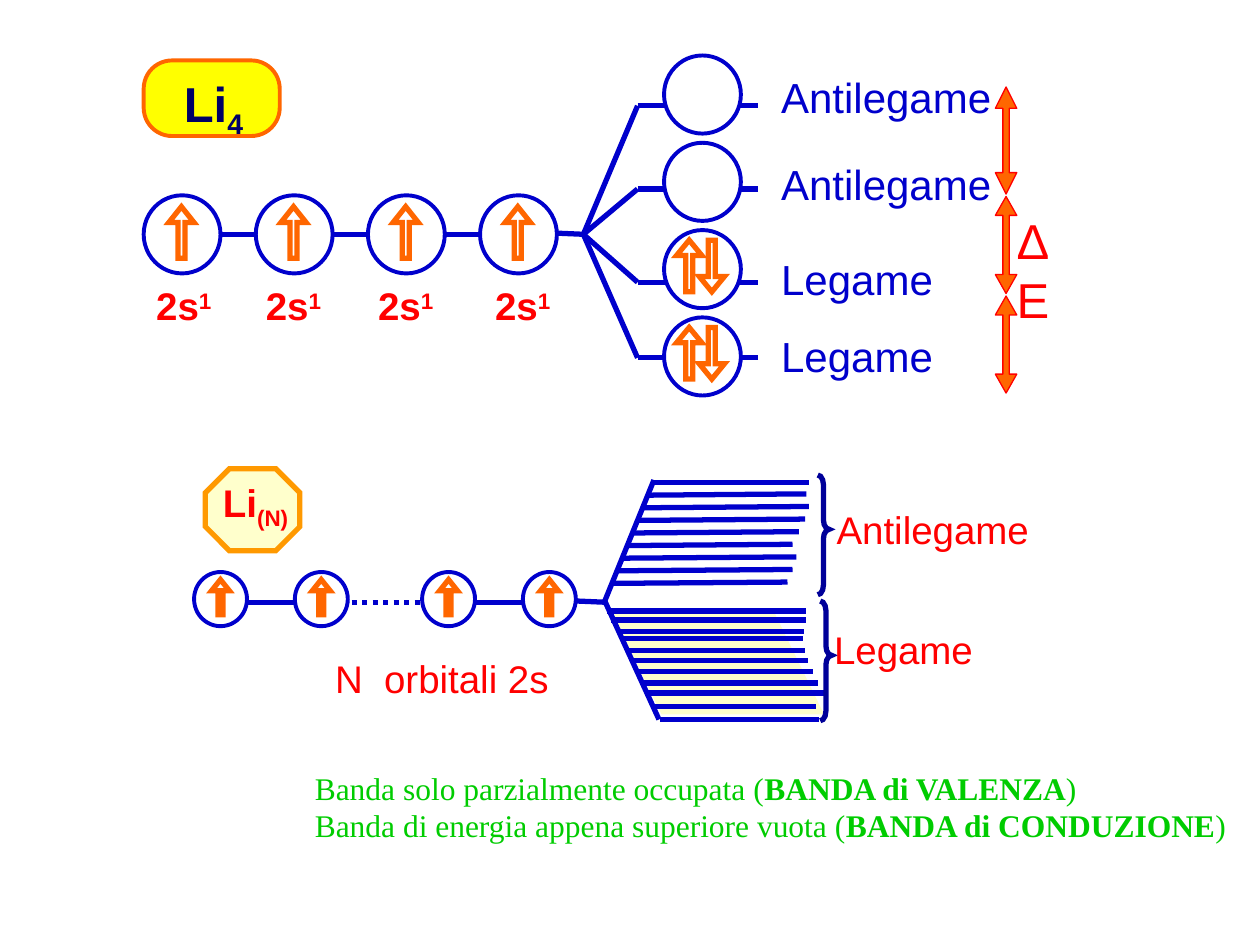
from dataclasses import dataclass

from lxml import etree
from pptx import Presentation
from pptx.dml.color import RGBColor
from pptx.enum.dml import MSO_LINE
from pptx.enum.shapes import MSO_CONNECTOR, MSO_SHAPE
from pptx.enum.text import MSO_ANCHOR, PP_ALIGN
from pptx.oxml.ns import qn
from pptx.util import Inches, Pt

STRAIGHT = MSO_CONNECTOR.STRAIGHT
ELLIPSE, UP_ARROW, DOWN_ARROW = MSO_SHAPE.OVAL, MSO_SHAPE.UP_ARROW, MSO_SHAPE.DOWN_ARROW
SUBSCRIPT, SUPERSCRIPT = -25000, 30000


@dataclass(frozen=True)
class Theme:
    blue: str = "0000CC"
    navy: str = "000066"
    brace: str = "000099"
    red: str = "FF0000"
    orange: str = "FF6600"
    amber: str = "FF9900"
    yellow: str = "FFFF00"
    cream: str = "FFFFCC"
    green: str = "00CC00"
    white: str = "FFFFFF"
    sans: str = "Arial"
    serif: str = "Times New Roman"
    title: int = 28
    level: int = 24
    label: int = 22
    note: int = 18
    thin: float = 0.75
    outline: float = 2.25
    thick: float = 3


theme = Theme()
presentation = Presentation()
presentation.slide_width, presentation.slide_height = Inches(10), Inches(7.5)
slide = presentation.slides.add_slide(presentation.slide_layouts[6])


def draw_shape(kind, box, fill, line, width=theme.thick, adjustments=()):
    """Add a preset shape with mitred corners; None means no fill or no line."""
    shape = slide.shapes.add_shape(kind, *map(Inches, box))
    shape.shadow.inherit = False
    for index, value in enumerate(adjustments):
        shape.adjustments[index] = value
    if fill:
        shape.fill.solid()
        shape.fill.fore_color.rgb = RGBColor.from_string(fill)
    else:
        shape.fill.background()
    if line:
        shape.line.color.rgb = RGBColor.from_string(line)
        shape.line.width = Pt(width)
        etree.SubElement(shape.line._get_or_add_ln(), qn("a:miter"), lim="800000")
    else:
        shape.line.fill.background()
    return shape


def add_label(box, runs, size, color, bold=False):
    """Add a label from (text, baseline) runs."""
    text_frame = slide.shapes.add_textbox(*map(Inches, box)).text_frame
    text_frame.word_wrap = True
    text_frame.margin_left = text_frame.margin_right = Inches(0.06)
    text_frame.margin_top = text_frame.margin_bottom = Inches(0.03)
    for text, baseline in runs:
        run = text_frame.paragraphs[0].add_run()
        run.text = text
        run.font.name, run.font.size, run.font.bold = theme.sans, Pt(size), bold
        run.font.color.rgb = RGBColor.from_string(color)
        if baseline:
            run._r.get_or_add_rPr().set("baseline", str(baseline))


# Occupied part of the band, behind its levels
band = draw_shape(MSO_SHAPE.PARALLELOGRAM, (4.86, 4.87, 1.68, 0.8), theme.cream, None,
                  adjustments=[0.487])
band._element.spPr.find(qn("a:xfrm")).set("flipV", "1")

# Connecting lines and energy levels: x1, y1, x2, y2
level_heights = [0.84, 1.5, 2.24, 2.84]
lines = [(x, 1.86, x + 0.38, 1.86) for x in (1.65, 2.6, 3.43)]
lines.append((4.41, 1.85, 4.64, 1.86))
for y in level_heights:
    lines += [(4.63, 1.86, 5.06, y), (5.06, y, 6.02, y)]
lines += [
    (1.97, 4.78, 2.34, 4.78), (3.76, 4.78, 4.14, 4.78), (4.57, 4.77, 4.81, 4.78),
    (4.8, 4.77, 5.19, 3.81), (4.8, 4.77, 5.23, 5.71),
]
antibonding_ends = [
    (5.18, 6.42), (5.14, 6.4), (5.1, 6.42), (5.07, 6.39), (5.02, 6.34),
    (4.97, 6.29), (4.95, 6.32), (4.91, 6.29), (4.85, 6.25),
]
for index, (start, end) in enumerate(antibonding_ends):
    y = 3.83 + 0.1 * index
    lines.append((start, y, end, y - 0.01 if index else y))
bonding_levels = [
    (4.82, 4.85, 6.4), (4.85, 4.92, 6.4), (4.91, 5.01, 6.38), (4.94, 5.07, 6.37),
    (4.97, 5.16, 6.39), (5.02, 5.24, 6.41), (5.06, 5.33, 6.45), (5.1, 5.42, 6.49),
    (5.14, 5.5, 6.54), (5.18, 5.61, 6.48), (5.24, 5.71, 6.5),
]
lines += [(start, y, end, y) for start, y, end in bonding_levels]
dotted_line = (2.79, 4.78, 3.33, 4.78)
for ends in lines + [dotted_line]:
    connector = slide.shapes.add_connector(STRAIGHT, *map(Inches, ends))
    connector.line.color.rgb = RGBColor.from_string(theme.blue)
    connector.line.width = Pt(theme.thick)
    if ends == dotted_line:
        connector.line.dash_style = MSO_LINE.ROUND_DOT
    etree.SubElement(connector._element.spPr, qn("a:effectLst"))

# Li4: atomic orbitals
for x, label_x in zip((1.14, 2.03, 2.92, 3.81), (1.18, 2.05, 2.94, 3.87)):
    draw_shape(ELLIPSE, (x, 1.55, 0.61, 0.62), theme.white, theme.blue, theme.outline)
    draw_shape(UP_ARROW, (x + 0.2, 1.64, 0.2, 0.41), theme.white, theme.orange,
               adjustments=[0.278, 0.629])
    add_label((label_x, 2.21, 0.65, 0.43), [("2s", 0), ("1", SUPERSCRIPT)],
              theme.label, theme.red, bold=True)

# Li4: molecular orbitals, the lower two occupied
levels = [("Antilegame", 0.54), ("Antilegame", 1.23), ("Legame", 1.98), ("Legame", 2.59)]
for index, (name, label_y) in enumerate(levels):
    y = 0.44 + 0.693 * index
    draw_shape(ELLIPSE, (5.27, y, 0.61, 0.62), theme.white, theme.blue, theme.outline)
    if name == "Legame":
        for arrow, x in ((UP_ARROW, 5.37), (DOWN_ARROW, 5.55)):
            draw_shape(arrow, (x, y + 0.08, 0.2, 0.41), theme.white, theme.orange,
                       adjustments=[0.278, 0.608])
    add_label((6.14, label_y, 1.9, 0.46), [(name, 0)], theme.level, theme.blue)

# Energy gaps: slim double-headed arrows, each as top, bottom and head length
left, right, center, half_shaft = 7.9, 8.07, 7.985, 0.025
for top, bottom, head in ((0.69, 1.54, 0.17), (1.56, 2.33, 0.15), (2.35, 3.12, 0.15)):
    upper, lower = top + head, bottom - head
    outline = [
        (center, top), (right, upper), (center + half_shaft, upper),
        (center + half_shaft, lower), (right, lower), (center, bottom), (left, lower),
        (center - half_shaft, lower), (center - half_shaft, upper), (left, upper),
    ]
    points = [(Inches(x), Inches(y)) for x, y in outline]
    builder = slide.shapes.build_freeform(*points[0])
    builder.add_line_segments(points[1:])
    gap_arrow = builder.convert_to_shape()
    gap_arrow.shadow.inherit = False
    gap_arrow.fill.solid()
    gap_arrow.fill.fore_color.rgb = RGBColor.from_string(theme.orange)
    gap_arrow.line.color.rgb = RGBColor.from_string(theme.red)
    gap_arrow.line.width = Pt(theme.thin)
add_label((8.01, 1.64, 0.4, 0.96), [("ΔE", 0)], theme.title, theme.red)

draw_shape(MSO_SHAPE.ROUNDED_RECTANGLE, (1.14, 0.48, 1.08, 0.6), theme.yellow, theme.orange,
           theme.outline, [0.375])
add_label((1.4, 0.55, 0.7, 0.53), [("Li", 0), ("4", SUBSCRIPT)], theme.title, theme.navy,
          bold=True)

# Li(N): atomic orbitals and bands
for x in (1.54, 2.34, 3.35, 4.15):
    draw_shape(ELLIPSE, (x, 4.54, 0.42, 0.43), theme.white, theme.blue, theme.outline)
    draw_shape(UP_ARROW, (x + 0.14, 4.6, 0.14, 0.28), theme.white, theme.orange,
               adjustments=[0.278, 0.629])
add_label((2.6, 5.17, 1.9, 0.43), [("N  orbitali 2s", 0)], theme.label, theme.red)

for name, x, y in (("Antilegame", 6.49, 3.77), ("Legame", 6.51, 4.77)):
    draw_shape(MSO_SHAPE.RIGHT_BRACE, (x, y, 0.09, 0.95), None, theme.brace,
               adjustments=[0.846, 0.454])
    label_x, label_y = (6.58, 3.99) if name == "Antilegame" else (6.56, 4.94)
    add_label((label_x, label_y, 1.75, 0.43), [(name, 0)], theme.label, theme.red)

draw_shape(MSO_SHAPE.OCTAGON, (1.63, 3.72, 0.75, 0.65), theme.cream, theme.amber,
           adjustments=[0.293])
add_label((1.71, 3.77, 0.89, 0.43), [("Li", 0), ("(N)", SUBSCRIPT)], theme.label, theme.red,
          bold=True)

# Closing note
note = slide.shapes.add_textbox(Inches(2.4), Inches(6.05), Inches(7.45), Inches(0.7)).text_frame
note.word_wrap = False
note.vertical_anchor = MSO_ANCHOR.MIDDLE
sentences = [("Banda solo parzialmente occupata (", "BANDA di VALENZA"),
             ("Banda di energia appena superiore vuota (", "BANDA di CONDUZIONE")]
for index, (opening, term) in enumerate(sentences):
    paragraph = note.add_paragraph() if index else note.paragraphs[0]
    paragraph.alignment = PP_ALIGN.JUSTIFY
    for text in (opening, term, ")"):
        run = paragraph.add_run()
        run.text = text
        run.font.name, run.font.size, run.font.bold = theme.serif, Pt(theme.note), text == term
        run.font.color.rgb = RGBColor.from_string(theme.green)

presentation.save("out.pptx")
